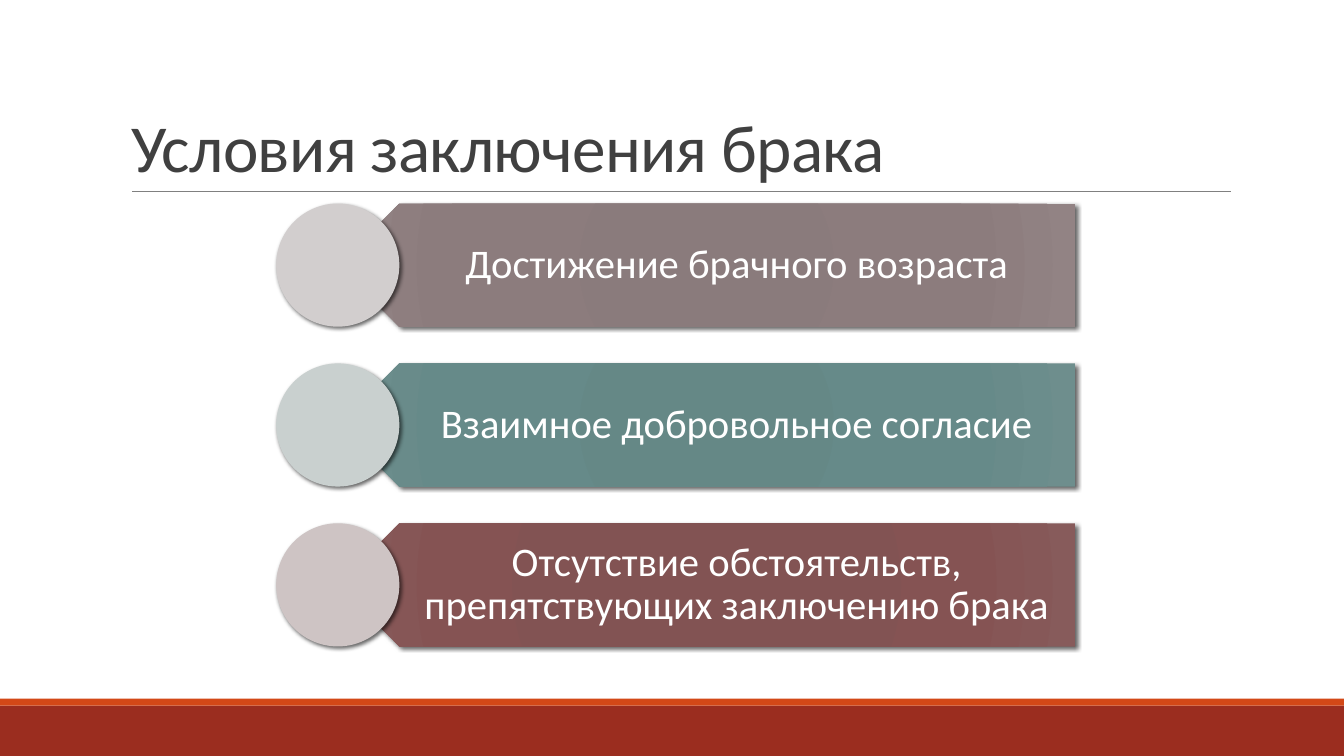
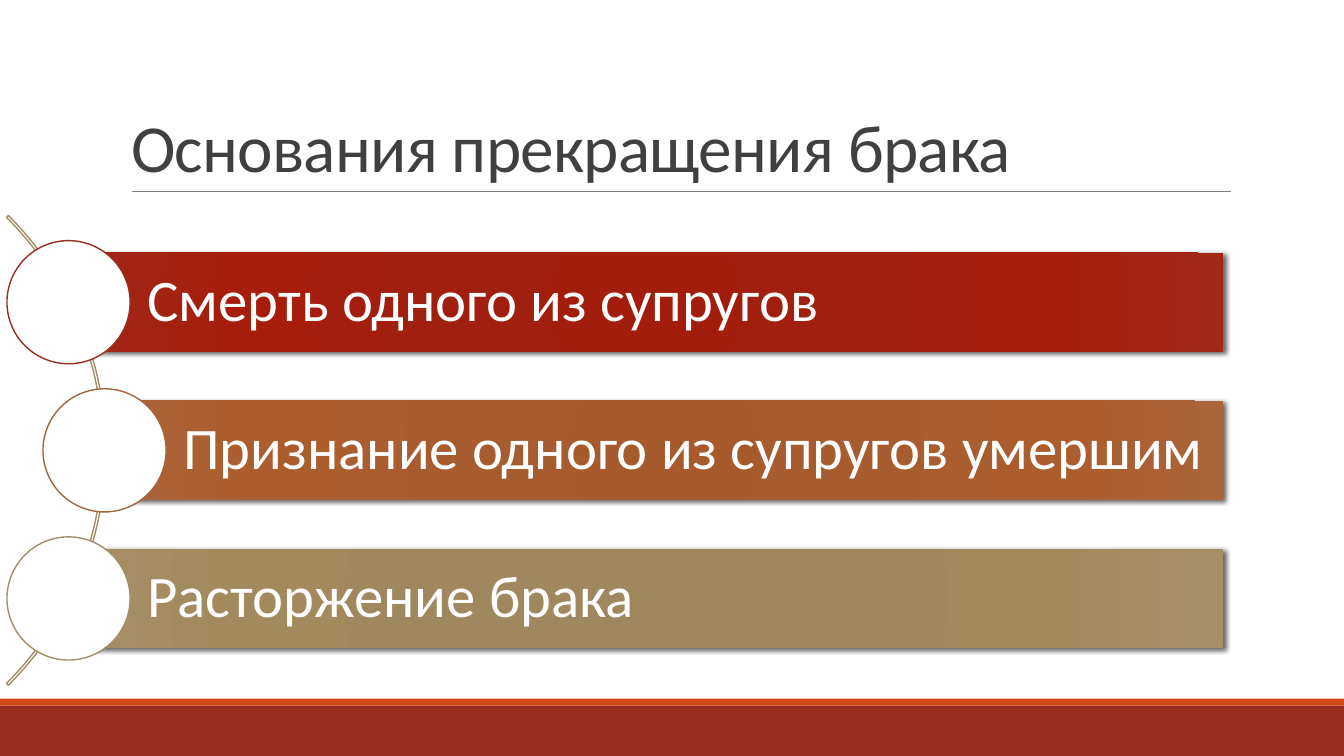
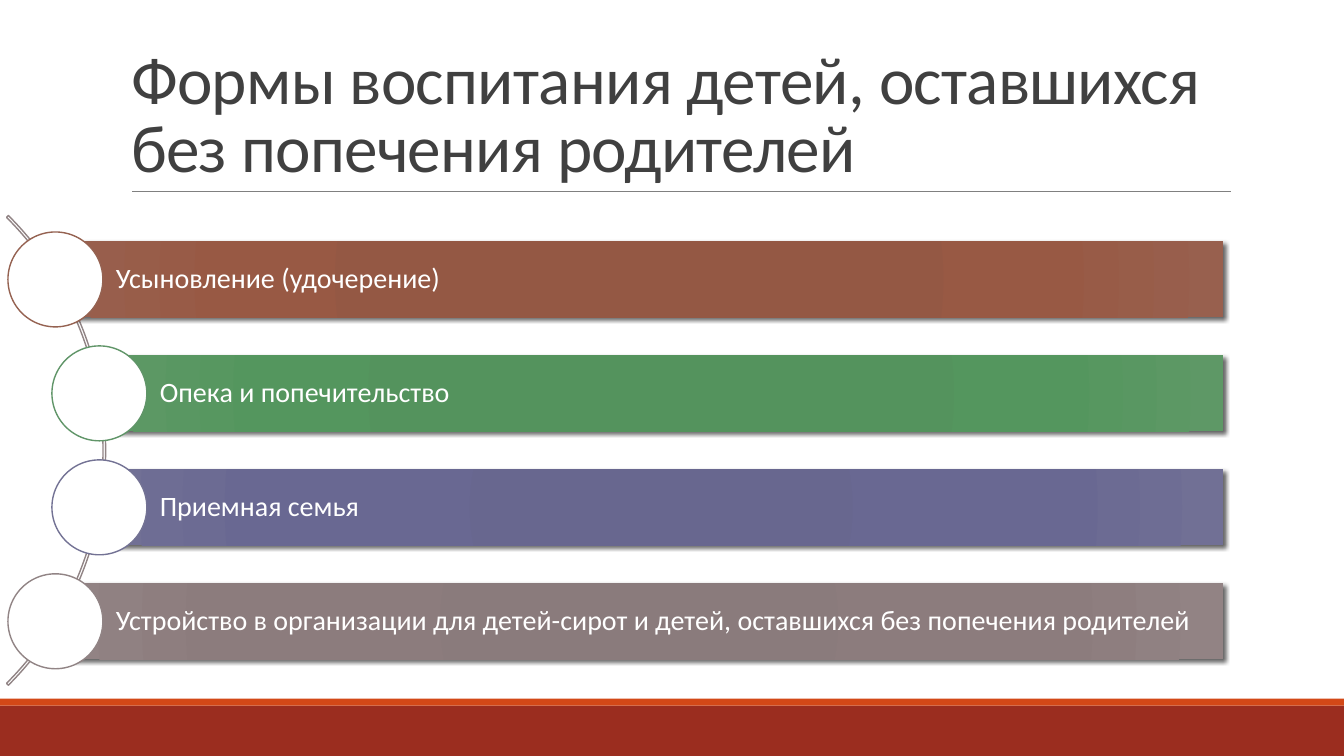
from dataclasses import dataclass

from lxml import etree
from pptx import Presentation
from pptx.dml.color import RGBColor
from pptx.enum import shapes, text
from pptx.oxml.ns import nsdecls, qn
from pptx.util import Pt


@dataclass(frozen=True)
class Tone:
    stops: tuple
    outline: str


@dataclass(frozen=True)
class Theme:
    font: str = "Calibri"
    title_size: int = 48
    title_color: str = "404040"
    label_color: str = "FFFFFF"
    footer: str = "9B2D1F"
    accent: str = "D34817"
    rule: str = "808080"
    marker: str = "FFFFFF"
    stop_places: tuple = (0, 34, 70, 100)


THEME = Theme()

# Bar gradients with their matching outlines
MAUVE = Tone(("89797A", "8A7B7C", "8C7C7D", "928384"), "918485")
TEAL = Tone(("638786", "658886", "668A89", "6E8E8D"), "638786")
WINE = Tone(("825151", "825353", "855353", "875B5B"), "825151")
RED = Tone(("A21D0C", "A01F0F", "A61D0C", "A12819"), "9B2D1F")
ORANGE = Tone(("A75B2C", "A75C2F", "AC5D2D", "AA6439"), "A4653F")
SAND = Tone(("9F875B", "9F885D", "A38A5D", "A58F67"), "A28E6A")
BRICK = Tone(("945742", "945844", "985944", "98604E"), "956251")
GREEN = Tone(("52935B", "54935D", "54965E", "5E9866"), "609568")
VIOLET = Tone(("67658E", "68678F", "696892", "717095"), "737294")

WIDTH, HEIGHT = 960, 540
BAR_RIGHT = 873.6
ARC_MIDDLE = 321.7
ARC_SIZE = 474.5


# Basic elements
def add_shape(slide, kind, left, top, width, height, fill=None, line=None):
    shape = slide.shapes.add_shape(kind, Pt(left), Pt(top), Pt(width), Pt(height))
    shape.shadow.inherit = False
    if fill:
        shape.fill.solid()
        shape.fill.fore_color.rgb = RGBColor.from_string(fill)
    else:
        shape.fill.background()
    if line:
        shape.line.color.rgb = RGBColor.from_string(line)
        shape.line.width = Pt(1)
    else:
        shape.line.fill.background()
    return shape


def add_shadow(shape):
    effects = shape.element.spPr.find(qn("a:effectLst"))
    effects.append(etree.fromstring(
        f'<a:outerShdw {nsdecls("a")} blurRad="{Pt(3)}" dist="{Pt(2)}" '
        'dir="2700000" algn="ctr" rotWithShape="0">'
        '<a:srgbClr val="000000"><a:alpha val="60000"/></a:srgbClr></a:outerShdw>'))


def fill_radial(shape, tone):
    shape.fill.gradient()
    gradient = shape.element.spPr.find(qn("a:gradFill"))
    for child in list(gradient):
        gradient.remove(child)
    stops = etree.SubElement(gradient, qn("a:gsLst"))
    for place, color in zip(THEME.stop_places, tone.stops):
        stop = etree.SubElement(stops, qn("a:gs"), pos=str(place * 1000))
        etree.SubElement(stop, qn("a:srgbClr"), val=color)
    circle = etree.SubElement(gradient, qn("a:path"), path="circle")
    etree.SubElement(circle, qn("a:fillToRect"),
                     {side: "100000" for side in "ltrb"})


def add_bar(slide, kind, left, top, width, height, tone):
    bar = add_shape(slide, kind, left, top, width, height)
    fill_radial(bar, tone)
    add_shadow(bar)
    return bar


def format_text(frame, size, color, spacing, align, anchor):
    frame.word_wrap = True
    frame.auto_size = text.MSO_AUTO_SIZE.NONE
    frame.vertical_anchor = anchor
    for paragraph in frame.paragraphs:
        paragraph.alignment = align
        paragraph.line_spacing = spacing
        for run in paragraph.runs:
            run.font.name = THEME.font
            run.font.size = Pt(size)
            run.font.color.rgb = RGBColor.from_string(color)


def set_label(shape, wording, size, insets, align=text.PP_ALIGN.LEFT):
    frame = shape.text_frame
    frame.text = wording
    frame.margin_left, frame.margin_top, frame.margin_right, frame.margin_bottom = (
        Pt(inset) for inset in insets)
    format_text(frame, size, THEME.label_color, 0.9, align,
                text.MSO_ANCHOR.MIDDLE)


# Shared frame: title place, rule and bottom bands live on the layout
def build_layout(layout, slide):
    title = layout.placeholders[0]
    title.left, title.top, title.width, title.height = (
        Pt(length) for length in (86.4, 22.3, 792, 114.5))

    footer = add_shape(slide, shapes.MSO_SHAPE.RECTANGLE, 0, 504, WIDTH, 36,
                       THEME.footer)
    accent = add_shape(slide, shapes.MSO_SHAPE.RECTANGLE, 0, 499, WIDTH, 5,
                       THEME.accent)
    rule = slide.shapes.add_connector(shapes.MSO_CONNECTOR.STRAIGHT,
                                      Pt(94.4), Pt(136.6), Pt(879), Pt(136.6))
    rule.line.color.rgb = RGBColor.from_string(THEME.rule)
    rule.line.width = Pt(0.5)
    etree.SubElement(rule.element.spPr, qn("a:effectLst"))

    for order, part in enumerate((footer, accent, rule)):
        part.element.xpath(".//p:cNvPr")[0].set("id", str(20 + order))
        layout.shapes.element.insert(2 + order, part.element)


def set_title(slide, wording):
    frame = slide.shapes.title.text_frame
    frame.text = wording
    format_text(frame, THEME.title_size, THEME.title_color, 0.85,
                text.PP_ALIGN.LEFT, text.MSO_ANCHOR.BOTTOM)
    for run in frame.paragraphs[0].runs:
        run.font.element.set("spc", "-50") if hasattr(run.font, "element") else \
            run._r.get_or_add_rPr().set("spc", "-50")


# Pentagon rows with a round marker at the pointed end
def add_pentagon_list(slide, rows):
    size, pitch, first_top = 88, 114.2, 145.4
    for index, (wording, tone, tint) in enumerate(rows):
        top = first_top + index * pitch
        pentagon = add_bar(slide, shapes.MSO_SHAPE.PENTAGON,
                           241.2, top, 527, size, tone)
        pentagon.rotation = 180
        label = slide.shapes.add_textbox(Pt(262.8), Pt(top), Pt(505), Pt(size))
        set_label(label, wording, 29, (38.9, 8.6, 16.6, 8.6),
                  text.PP_ALIGN.CENTER)
        marker = add_shape(slide, shapes.MSO_SHAPE.OVAL,
                           197.3, top, size, size, tint)
        add_shadow(marker)


# Bars whose round markers follow an arc
def add_arc_list(slide, rows, pitch, bar_height, marker_size, text_size, insets):
    arc = add_shape(slide, shapes.MSO_SHAPE.BLOCK_ARC, -399,
                    ARC_MIDDLE - ARC_SIZE / 2, ARC_SIZE, ARC_SIZE,
                    line=rows[-1][1].outline)
    for index, value in enumerate((189, 27, 0.004)):
        arc.adjustments[index] = value
    for index, (wording, tone, center) in enumerate(rows):
        middle = ARC_MIDDLE + (index - (len(rows) - 1) / 2) * pitch
        bar = add_bar(slide, shapes.MSO_SHAPE.RECTANGLE, center,
                      middle - bar_height / 2, BAR_RIGHT - center, bar_height, tone)
        set_label(bar, wording, text_size, insets)
        add_shape(slide, shapes.MSO_SHAPE.OVAL, center - marker_size / 2,
                  middle - marker_size / 2, marker_size, marker_size,
                  THEME.marker, tone.outline)


def main():
    deck = Presentation()
    deck.slide_width, deck.slide_height = Pt(WIDTH), Pt(HEIGHT)
    layout = deck.slide_layouts[5]
    conditions, grounds, care = (deck.slides.add_slide(layout) for _ in range(3))
    build_layout(layout, conditions)

    # Conditions for marriage
    set_title(conditions, "Условия заключения брака")
    add_pentagon_list(conditions, [
        ("Достижение брачного возраста", MAUVE, "D2CECE"),
        ("Взаимное добровольное согласие", TEAL, "C9D0CF"),
        ("Отсутствие обстоятельств, препятствующих заключению брака", WINE,
         "CEC4C4"),
    ])

    # Grounds for ending a marriage
    set_title(grounds, "Основания прекращения брака")
    add_arc_list(grounds, [
        ("Смерть одного из супругов", RED, 49),
        ("Признание одного из супругов умершим", ORANGE, 74.7),
        ("Расторжение брака", SAND, 49),
    ], pitch=105.8, bar_height=70.6, marker_size=88, text_size=42,
        insets=(56.2, 8.6, 8.6, 8.6))

    # Forms of care for children
    set_title(care, "Формы воспитания детей, оставшихся без попечения родителей")
    add_arc_list(care, [
        ("Усыновление (удочерение)", BRICK, 39.6),
        ("Опека и попечительство", GREEN, 71),
        ("Приемная семья", VIOLET, 71),
        ("Устройство в организации для детей-сирот и детей, "
         "оставшихся без попечения родителей", MAUVE, 39.6),
    ], pitch=81.4, bar_height=54.2, marker_size=67.8, text_size=20,
        insets=(43.2, 4.3, 4.3, 4.3))

    deck.save("out.pptx")


if __name__ == "__main__":
    main()
